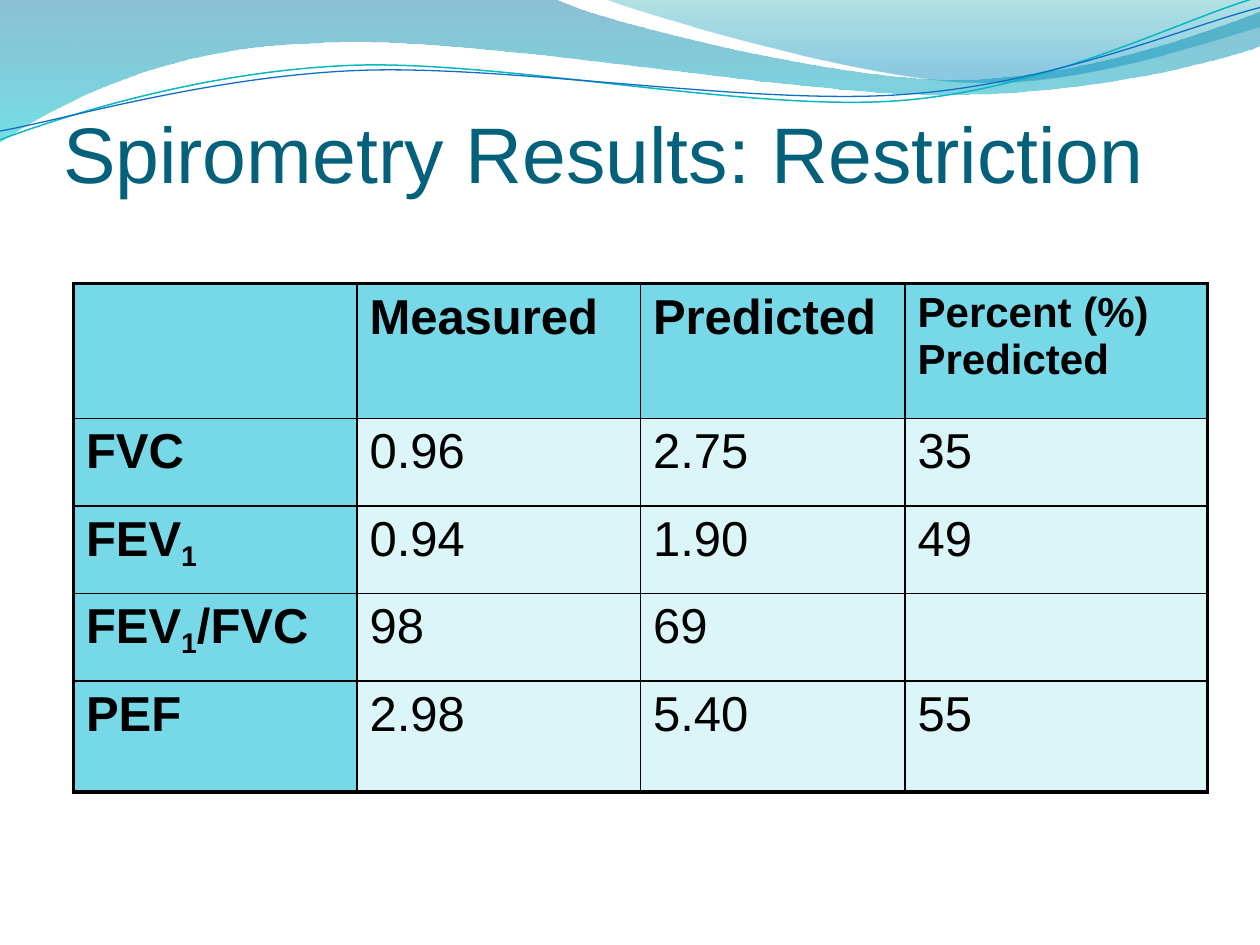
import pptx
import pptx.util
import pptx.dml.color
import pptx.enum.text
import pptx.oxml.ns
import lxml.etree

INK = {"title": "04617B", "text": "000000", "rule": "000000",
       "head": "77D9E8", "body": "DBF5F9",
       "teal": "0AB8BF", "blue": "0F6FC6"}
FONT = "Arial"
WIDE, HIGH = pptx.util.Inches(10), pptx.util.Inches(7.5)
UNIT = WIDE // 100
COLS = (22.5, 22.5, 21, 24)
ROWS = (10.7, 6.95, 6.95, 6.95, 8.8)
DATA = (("", "Measured", "Predicted", "Percent (%) Predicted"),
        ("FVC", "0.96", "2.75", "35"),
        ("FEV_1", "0.94", "1.90", "49"),
        ("FEV_1_/FVC", "98", "69", ""),
        ("PEF", "2.98", "5.40", "55"))

BANDS = (
    (((0, 0), (44, -0.1), (47.6, 1.7, 66.4, 6.3, 75.8, 6.3),
      (85.3, 6.3, 95.8, 2.6, 100, 0.9), (100.1, 3.6),
      (98.3, 4.4, 87, 7.6, 74.6, 7.5), (62.2, 7.5, 38.2, 2.8, 25.7, 3.4),
      (12.9, 3.6, 4.6, 8.3, -0.1, 11.3)),
     ((0, "0074A1", 45), (1, "00C6CF", 55))),
    (((47.9, -0.1), (50.9, 1.1, 68.2, 6.2, 76.9, 6.5),
      (85.6, 6.9, 96.1, 3.2, 100, 2.1), (100, 0)),
     ((0, "00A1A9", 30), (0.8, "008BBF", 45))),
)
WAVES = (
    (((0, 11.1), (4.8, 9.3, 15.8, 5.7, 27.7, 5.2),
      (39.5, 4.7, 59.3, 8.9, 71.3, 8), (83.3, 7.1, 93.8, 1.5, 99.8, -0.2)),
     "teal", 0.85),
    (((0, 10.4), (4.7, 9.6, 16.4, 6.1, 28.3, 5.6),
      (40.3, 5.1, 59.7, 8.4, 71.7, 7.5), (83.6, 6.7, 94.1, 2.1, 100, 0.6)),
     "blue", 0.75),
)


def grid(num):
    return round(num * UNIT)


def rgb(code):
    return pptx.dml.color.RGBColor.from_string(code)


def style(item, vals):
    for name, val in vals.items():
        setattr(item, name, val)


def node(top, tag, **vals):
    sub = lxml.etree.SubElement(top, pptx.oxml.ns.qn(tag))
    for name, val in vals.items():
        sub.set(name, str(val))
    return sub


def curve(slide, steps, close):
    dots = [(grid(step[n]), grid(step[n + 1]))
            for step in steps for n in range(0, len(step), 2)]
    pen = slide.shapes.build_freeform(*dots[0])
    pen.add_line_segments(dots[1:], close=close)
    shape = pen.convert_to_shape()
    shape.shadow.inherit = False
    lines = iter(list(shape.element.iter(pptx.oxml.ns.qn("a:lnTo"))))
    for step in steps[1:]:
        first = next(lines)
        if len(step) == 6:
            first.tag = pptx.oxml.ns.qn("a:cubicBezTo")
            for _ in range(2):
                line = next(lines)
                first.append(line[0])
                line.getparent().remove(line)
    return shape


def band(slide, steps, stops):
    shape = curve(slide, steps, True)
    shape.line.fill.background()
    shape.fill.gradient()
    shape.fill.gradient_angle = 270
    for stop, (place, code, _) in zip(shape.fill.gradient_stops, stops):
        stop.position = place
        stop.color.rgb = rgb(code)
    tints = shape.element.spPr.iter(pptx.oxml.ns.qn("a:srgbClr"))
    for tint, stop in zip(list(tints), stops):
        node(tint, "a:alpha", val=stop[2] * 1000)


def wave(slide, steps, hue, size):
    shape = curve(slide, steps, False)
    shape.fill.background()
    shape.line.color.rgb = rgb(INK[hue])
    shape.line.width = pptx.util.Pt(size)


def write(para, text, size, hue, bold=False):
    for n, part in enumerate(text.split("_")):
        run = para.add_run()
        run.text = part
        style(run.font, {"name": FONT, "size": pptx.util.Pt(size),
                         "bold": bold})
        run.font.color.rgb = rgb(INK[hue])
        if n % 2:
            run.font._element.set("baseline", "-20000")


def edge(cell, row, col):
    outer = {"L": col == 0, "R": col == len(COLS) - 1,
             "T": row == 0, "B": row == len(ROWS) - 1}
    props = cell._tc.get_or_add_tcPr()
    for side, thick in outer.items():
        line = node(props, "a:ln" + side,
                    w=pptx.util.Pt(2.25 if thick else 1))
        node(node(line, "a:solidFill"), "a:srgbClr", val=INK["rule"])


def table(slide):
    frame = slide.shapes.add_table(
        len(ROWS), len(COLS), grid(5.83), grid(22.5),
        grid(sum(COLS)), grid(sum(ROWS)))
    sheet = frame.table
    style(sheet, {"first_row": False, "horz_banding": False})
    for col, wide in zip(sheet.columns, COLS):
        col.width = grid(wide)
    for r, (row, high) in enumerate(zip(sheet.rows, ROWS)):
        row.height = grid(high)
        for c, text in enumerate(DATA[r]):
            cell = sheet.cell(r, c)
            head = r == 0 or c == 0
            edge(cell, r, c)
            cell.fill.solid()
            cell.fill.fore_color.rgb = rgb(INK["head" if head else "body"])
            if text:
                para = cell.text_frame.paragraphs[0]
                gap = node(para._p.get_or_add_pPr(), "a:spcBef")
                node(gap, "a:spcPct", val=20000)
                size = 24 if (r, c) == (0, 3) else 28
                write(para, text, size, "text", head)


def title(slide, text):
    box = slide.shapes.title
    style(box, {"left": grid(5), "top": grid(3.3),
                "width": grid(90), "height": grid(12.5)})
    style(box.text_frame, {
        "margin_left": 0, "margin_right": 0, "margin_bottom": 0,
        "margin_top": grid(0.5), "word_wrap": True,
        "auto_size": pptx.enum.text.MSO_AUTO_SIZE.NONE,
        "vertical_anchor": pptx.enum.text.MSO_ANCHOR.BOTTOM})
    para = box.text_frame.paragraphs[0]
    para.alignment = pptx.enum.text.PP_ALIGN.LEFT
    write(para, text, 45, "title")
    box.element.getparent().append(box.element)


def main():
    deck = pptx.Presentation()
    style(deck, {"slide_width": WIDE, "slide_height": HIGH})
    slide = deck.slides.add_slide(deck.slide_layouts[5])
    for item in BANDS:
        band(slide, *item)
    for item in WAVES:
        wave(slide, *item)
    table(slide)
    title(slide, "Spirometry Results: Restriction")
    deck.save("out.pptx")


if __name__ == "__main__":
    main()
